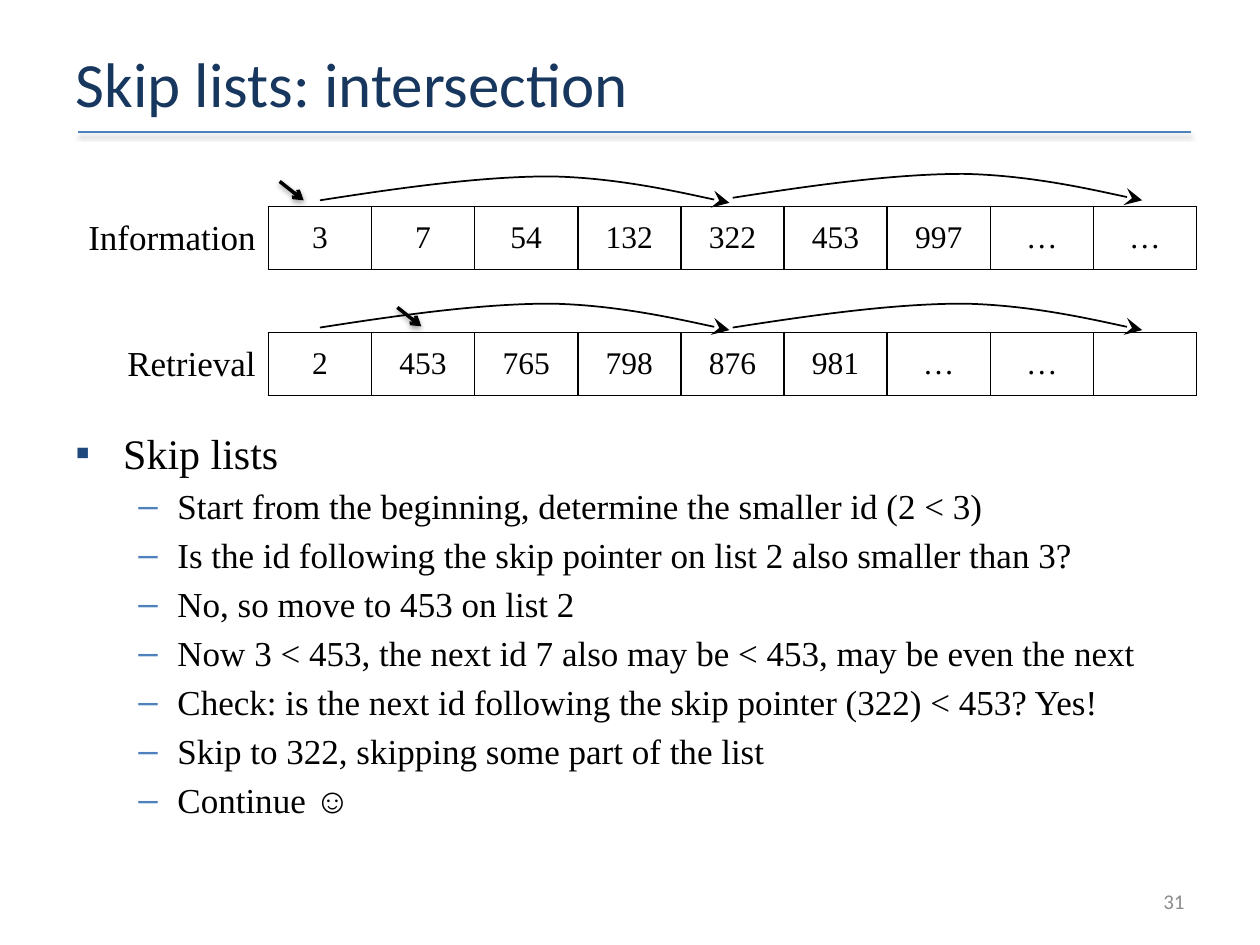
from dataclasses import dataclass

import pptx
import pptx.dml.color
import pptx.enum.shapes
import pptx.enum.text
import pptx.oxml
import pptx.oxml.ns
import pptx.util
from lxml import etree

Inches = pptx.util.Inches
Align = pptx.enum.text.PP_ALIGN
Middle = pptx.enum.text.MSO_ANCHOR.MIDDLE
RGBColor = pptx.dml.color.RGBColor

BLACK = RGBColor(0x00, 0x00, 0x00)
NAVY = RGBColor(0x17, 0x37, 0x5E)
DARK_BLUE = RGBColor(0x1F, 0x49, 0x7D)
BLUE = RGBColor(0x4F, 0x81, 0xBD)
GRAY = RGBColor(0x8C, 0x8C, 0x8C)
SERIF, SANS = "Times New Roman", "Calibri"

WIDTH, HEIGHT = 10, 7.5
MARGIN = WIDTH / 20
CONTENT = WIDTH - 2 * MARGIN
LABEL_COLUMN = 1.63
ENTRY_COLUMNS = 9
COLUMN = (CONTENT - LABEL_COLUMN) / ENTRY_COLUMNS
TABLE_TOP, ROW = 1.64, 0.5
SKIP = 4  # columns that one skip pointer jumps over


@dataclass(frozen=True)
class Posting:
    term: str
    entries: tuple[str, ...]


@dataclass(frozen=True)
class Level:
    bullet: str
    color: RGBColor
    size: int
    left: float
    hanging: float


@dataclass(frozen=True)
class Marker:
    """A mark above the table, placed by entry columns from the first one."""
    column: float
    top: float


POSTINGS = (
    Posting("Information", ("3", "7", "54", "132", "322", "453", "997", "…", "…")),
    Posting("Retrieval", ("2", "453", "765", "798", "876", "981", "…", "…", "")),
)
HEADING = Level("▪", DARK_BLUE, 24, 0.38, 0.38)
STEP = Level("–", BLUE, 20, 0.81, 0.31)
STEPS = (
    "Start from the beginning, determine the smaller id (2 < 3)",
    "Is the id following the skip pointer on list 2 also smaller than 3?",
    "No, so move to 453 on list 2",
    "Now 3 < 453, the next id 7 also may be < 453, may be even the next",
    "Check: is the next id following the skip pointer (322) < 453? Yes!",
    "Skip to 322, skipping some part of the list",
    "Continue ☺",
)
SKIP_POINTERS = (Marker(0.5, 1.59), Marker(0.5, 2.6),
                 Marker(SKIP + 0.5, 1.57), Marker(SKIP + 0.5, 2.6))
CURSORS = (Marker(0.11, 1.44), Marker(1.25, 2.44))
# Control points of two Bézier segments, relative to the start of a skip pointer
ARC = ((0.64, -0.1), (1.28, -0.19), (1.83, -0.19),
       (2.37, -0.18), (3.25, 0.02), (3.25, 0.02))


def add_xml(parent, xml: str):
    element = pptx.oxml.parse_xml(
        xml.replace(" ", f" {pptx.oxml.ns.nsdecls('a')} ", 1))
    parent.append(element)


def write(para, text: str, *, size: float, font: str = SERIF,
          color: RGBColor = BLACK, align=Align.LEFT):
    para.alignment = align
    span = para.add_run()
    span.text = text
    span.font.name, span.font.size = font, pptx.util.Pt(size)
    span.font.color.rgb = color


def add_arrowhead(line_shape, kind: str, size: str = "med"):
    line = line_shape.line._get_or_add_ln()
    add_xml(line, f'<a:tailEnd type="{kind}" w="{size}" len="{size}"/>')


def add_shadow_line(page, start, end, color: RGBColor, weight: float):
    line = page.shapes.add_connector(
        pptx.enum.shapes.MSO_CONNECTOR.STRAIGHT, *map(Inches, (*start, *end)))
    line.line.color.rgb = color
    line.line.width = pptx.util.Pt(weight)
    add_xml(line._element.spPr,
            '<a:effectLst ><a:outerShdw blurRad="40000" dist="20000" dir="5400000" '
            'rotWithShape="0"><a:srgbClr val="000000"><a:alpha val="38000"/>'
            '</a:srgbClr></a:outerShdw></a:effectLst>')
    return line


def set_borders(cell, sides: str):
    """Rule the named sides (of L, R, T, B) and leave the others clear."""
    properties = cell._tc.get_or_add_tcPr()
    for side in "LRTB":
        fill = (f'<a:solidFill><a:srgbClr val="{BLACK}"/></a:solidFill>'
                if side in sides else "<a:noFill/>")
        add_xml(properties, f'<a:ln{side} w="12700">{fill}</a:ln{side}>')
    cell.fill.background()


def add_postings(page):
    rows = 2 * len(POSTINGS) - 1
    table = page.shapes.add_table(
        rows, ENTRY_COLUMNS + 1,
        *map(Inches, (MARGIN, TABLE_TOP, CONTENT, rows * ROW))).table
    table.first_row = table.horz_banding = False
    for index, column in enumerate(table.columns):
        column.width = Inches(COLUMN if index else LABEL_COLUMN)
    for r in range(rows):
        is_gap = r % 2 == 1
        table.rows[r].height = Inches(ROW)
        for c in range(ENTRY_COLUMNS + 1):
            cell = table.cell(r, c)
            cell.vertical_anchor = Middle
            if is_gap:
                set_borders(cell, "TB" if c else "")
                continue
            posting = POSTINGS[r // 2]
            set_borders(cell, "LRTB" if c else "R")
            text = posting.entries[c - 1] if c else posting.term
            if text:
                write(cell.text_frame.paragraphs[0], text, size=18 if c else 20,
                      align=Align.CENTER if c else Align.RIGHT)


def marker_left(marker: Marker) -> float:
    return MARGIN + LABEL_COLUMN + marker.column * COLUMN


def curve_segments(freeform):
    """Turn each three straight segments into one cubic Bézier segment."""
    qn = pptx.oxml.ns.qn
    lines = list(freeform._element.iter(qn("a:lnTo")))
    for first in range(0, len(lines), 3):
        curve = etree.Element(qn("a:cubicBezTo"))
        lines[first].addprevious(curve)
        for line in lines[first:first + 3]:
            curve.append(line[0])
            line.getparent().remove(line)


def add_skip_pointer(page, pointer: Marker):
    left = marker_left(pointer)
    builder = page.shapes.build_freeform(Inches(left), Inches(pointer.top))
    builder.add_line_segments(
        [(Inches(left + x), Inches(pointer.top + y)) for x, y in ARC], close=False)
    arc = builder.convert_to_shape()
    curve_segments(arc)
    arc.shadow.inherit = False
    arc.fill.background()
    arc.line.color.rgb = BLACK
    arc.line.width = pptx.util.Pt(1)
    add_arrowhead(arc, "stealth", "lg")


def add_cursor(page, cursor: Marker):
    left = marker_left(cursor)
    line = add_shadow_line(page, (left, cursor.top), (left + 0.19, cursor.top + 0.15),
                           BLACK, 2)
    add_arrowhead(line, "arrow")


def add_text_box(page, left: float, top: float, width: float, height: float):
    frame = page.shapes.add_textbox(*map(Inches, (left, top, width, height))).text_frame
    frame.word_wrap = True
    return frame


def write_bullet(para, text: str, level: Level):
    write(para, text, size=level.size)
    properties = para._p.get_or_add_pPr()
    properties.set("marL", str(Inches(level.left)))
    properties.set("indent", str(-Inches(level.hanging)))
    add_xml(properties, '<a:spcBef ><a:spcPct val="20000"/></a:spcBef>')
    add_xml(properties, f'<a:buClr ><a:srgbClr val="{level.color}"/></a:buClr>')
    add_xml(properties, '<a:buFont typeface="Arial"/>')
    add_xml(properties, f'<a:buChar char="{level.bullet}"/>')


def main():
    deck = pptx.Presentation()
    deck.slide_width, deck.slide_height = Inches(WIDTH), Inches(HEIGHT)
    page = deck.slides.add_slide(deck.slide_layouts[5])

    title = page.shapes.title
    title.left, title.top, title.width, title.height = map(
        Inches, (MARGIN, 0.3, CONTENT, 0.71))
    title.text_frame.vertical_anchor = Middle
    write(title.text_frame.paragraphs[0], "Skip lists: intersection",
          size=36, font=SANS, color=NAVY)
    add_shadow_line(page, (0.62, 1.05), (9.45, 1.05), BLUE, 1)

    add_postings(page)
    number = add_text_box(page, 7.17, 6.95, 2.33, 0.4)
    number.vertical_anchor = Middle
    write(number.paragraphs[0], "31", size=12, font=SANS, color=GRAY, align=Align.RIGHT)

    body = add_text_box(page, MARGIN, 3.34, CONTENT, 3.36)
    write_bullet(body.paragraphs[0], "Skip lists", HEADING)
    for step in STEPS:
        para = body.add_paragraph()
        para.level = 1
        write_bullet(para, step, STEP)

    for pointer in SKIP_POINTERS:
        add_skip_pointer(page, pointer)
    for cursor in CURSORS:
        add_cursor(page, cursor)
    deck.save("out.pptx")


if __name__ == "__main__":
    main()
